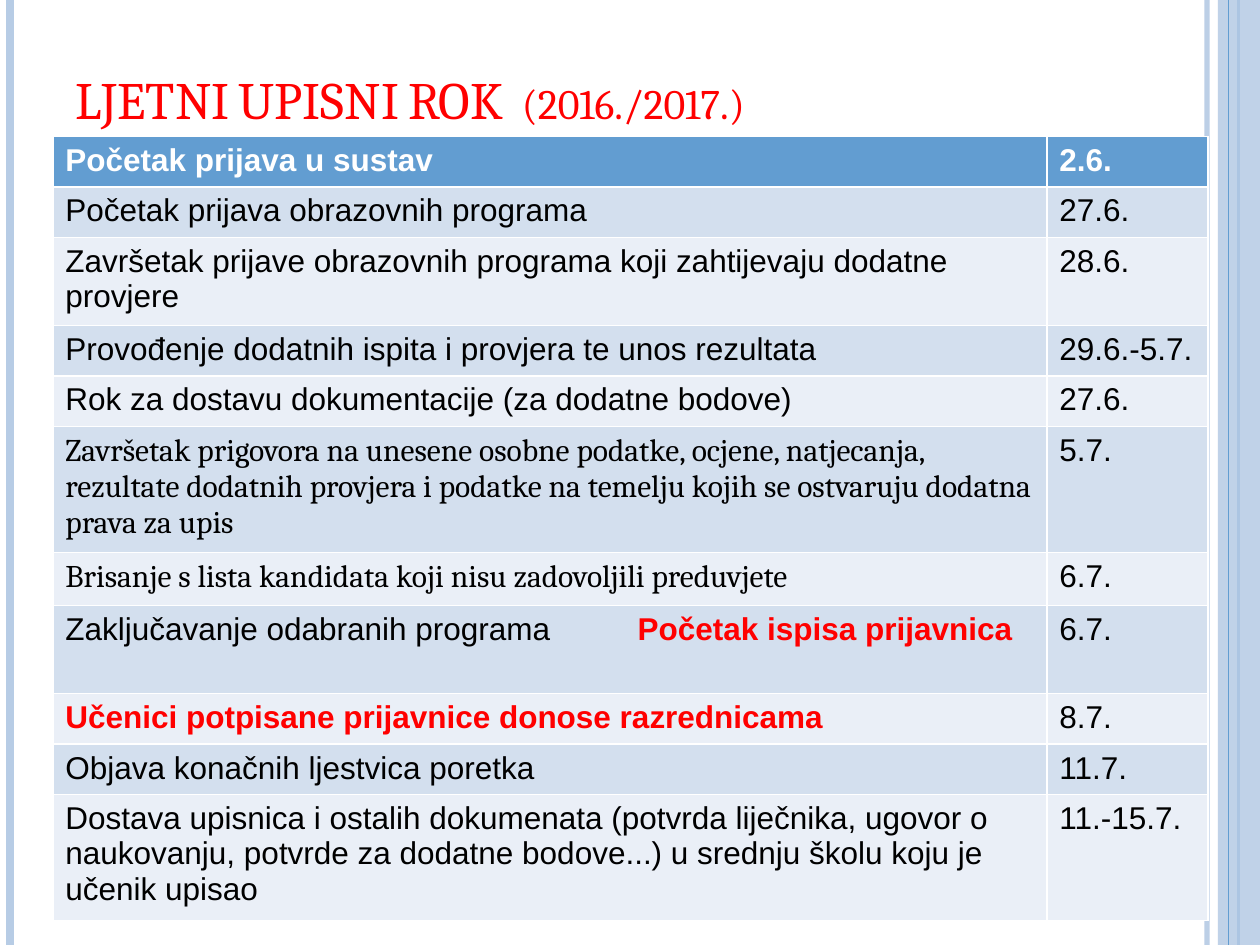
from dataclasses import dataclass

from lxml import etree
from pptx import Presentation
from pptx.dml.color import RGBColor
from pptx.enum.shapes import MSO_CONNECTOR, MSO_SHAPE
from pptx.enum.text import MSO_ANCHOR
from pptx.oxml.ns import qn
from pptx.util import Pt

STRAIGHT = MSO_CONNECTOR.STRAIGHT
RECTANGLE = MSO_SHAPE.RECTANGLE
BOTTOM = MSO_ANCHOR.BOTTOM

COLORS = {
    "pale_blue": "B7CCE5",
    "blue": "629DD1",
    "odd_row": "D3DFEE",
    "even_row": "EAEFF7",
    "red": "FF0000",
    "black": "000000",
    "white": "FFFFFF",
}
SLIDE_WIDTH, SLIDE_HEIGHT = 720, 540
COLUMN_WIDTHS = (568, 92)
ONE_LINE, CAMBRIA_LINE, TWO_LINES, THREE_LINES = 28.8, 30.24, 50.4, 72
NOTICE_TAB = 327


@dataclass
class Stripe:
    x: float
    weight: float
    color: str
    opacity: int = 100


@dataclass
class Deadline:
    event: str
    date: str
    height: float = ONE_LINE
    font: str = "Arial"
    urgent: bool = False
    notice: str = ""


STRIPES = (
    Stripe(689.8, 3, "pale_blue", 93),
    Stripe(5.8, 4.5, "pale_blue"),
    Stripe(707.8, 1.5, "blue"),
)
INNER_STRIPE = Stripe(702, 0.75, "blue")

DEADLINES = (
    Deadline("Početak prijava u sustav", "2.6."),
    Deadline("Početak prijava obrazovnih programa", "27.6."),
    Deadline("Završetak prijave obrazovnih programa koji zahtijevaju dodatne provjere",
             "28.6.", TWO_LINES),
    Deadline("Provođenje dodatnih ispita i provjera te unos rezultata", "29.6.-5.7."),
    Deadline("Rok za dostavu dokumentacije (za dodatne bodove)", "27.6."),
    Deadline("Završetak prigovora na unesene osobne podatke, ocjene, natjecanja, "
             "rezultate dodatnih provjera i podatke na temelju kojih se ostvaruju "
             "dodatna prava za upis", "5.7.", THREE_LINES, "Cambria"),
    Deadline("Brisanje s lista kandidata koji nisu zadovoljili preduvjete", "6.7.",
             CAMBRIA_LINE, "Cambria"),
    Deadline("Zaključavanje odabranih programa", "6.7.", TWO_LINES,
             notice="Početak ispisa prijavnica"),
    Deadline("Učenici potpisane prijavnice donose razrednicama", "8.7.", urgent=True),
    Deadline("Objava konačnih ljestvica poretka", "11.7."),
    Deadline("Dostava upisnica i ostalih dokumenata (potvrda liječnika, ugovor o "
             "naukovanju, potvrde za dodatne bodove...) u srednju školu koju je "
             "učenik upisao", "11.-15.7.", THREE_LINES),
)


def rgb(color: str) -> RGBColor:
    return RGBColor.from_string(COLORS[color])


def set_opacity(properties, percent: int) -> None:
    """Add transparency to the first solid colour below the given element."""
    if percent < 100:
        color = next(properties.iter(qn("a:srgbClr")))
        etree.SubElement(color, qn("a:alpha")).set("val", str(percent * 1000))


def add_stripe(slide, stripe: Stripe) -> None:
    line = slide.shapes.add_connector(
        STRAIGHT, Pt(stripe.x), Pt(0), Pt(stripe.x), Pt(SLIDE_HEIGHT))
    line.line.color.rgb = rgb(stripe.color)
    line.line.width = Pt(stripe.weight)
    properties = line._element.spPr
    set_opacity(properties, stripe.opacity)
    etree.SubElement(properties, qn("a:effectLst"))


def add_side_band(slide) -> None:
    left = 696
    band = slide.shapes.add_shape(
        RECTANGLE, Pt(left), Pt(0), Pt(SLIDE_WIDTH - left), Pt(SLIDE_HEIGHT))
    band.shadow.inherit = False
    band.fill.solid()
    band.fill.fore_color.rgb = rgb("pale_blue")
    band.line.fill.background()
    set_opacity(band._element.spPr, 87)


def add_run(paragraph, text: str, color: str, **font_format):
    run = paragraph.add_run()
    run.text = text
    run.font.color.rgb = rgb(color)
    for attribute, value in font_format.items():
        setattr(run.font, attribute, value)
    return run


def add_title(slide) -> None:
    title = slide.shapes.add_textbox(Pt(36), Pt(21.6), Pt(588), Pt(56.2))
    frame = title.text_frame
    frame.word_wrap = True
    frame.vertical_anchor = BOTTOM
    run = add_run(frame.paragraphs[0], "LJETNI UPISNI ROK  (2016./2017.)", "red",
                  name="Cambria", size=Pt(30))
    run.font._element.set("cap", "small")


def add_tab_stop(paragraph, position: float) -> None:
    stops = etree.SubElement(paragraph._p.get_or_add_pPr(), qn("a:tabLst"))
    etree.SubElement(stops, qn("a:tab"), pos=str(Pt(position)), algn="l")


def fill_row(table, index: int, deadline: Deadline) -> None:
    is_header = index == 0
    row_fill = "blue" if is_header else "odd_row" if index % 2 else "even_row"
    text_color = "white" if is_header else "black"
    event_color = "red" if deadline.urgent else text_color
    event_cell, date_cell = table.cell(index, 0), table.cell(index, 1)
    for cell in (event_cell, date_cell):
        cell.fill.solid()
        cell.fill.fore_color.rgb = rgb(row_fill)

    event = event_cell.text_frame.paragraphs[0]
    add_run(event, deadline.event, event_color, name=deadline.font, size=Pt(18),
            bold=is_header or deadline.urgent)
    if deadline.notice:
        add_tab_stop(event, NOTICE_TAB)
        add_run(event, "\t" + deadline.notice, "red", name="Arial", size=Pt(18), bold=True)
    add_run(date_cell.text_frame.paragraphs[0], deadline.date, text_color,
            name="Arial", size=Pt(18), bold=is_header)


def add_schedule(slide) -> None:
    height = sum(deadline.height for deadline in DEADLINES)
    table = slide.shapes.add_table(
        len(DEADLINES), len(COLUMN_WIDTHS), Pt(30.2), Pt(78),
        Pt(sum(COLUMN_WIDTHS)), Pt(height)).table
    for column, width in zip(table.columns, COLUMN_WIDTHS):
        column.width = Pt(width)
    for index, deadline in enumerate(DEADLINES):
        table.rows[index].height = Pt(deadline.height)
        fill_row(table, index, deadline)


def main() -> None:
    presentation = Presentation()
    presentation.slide_width = Pt(SLIDE_WIDTH)
    presentation.slide_height = Pt(SLIDE_HEIGHT)
    slide = presentation.slides.add_slide(presentation.slide_layouts[6])
    for stripe in STRIPES:
        add_stripe(slide, stripe)
    add_side_band(slide)
    add_stripe(slide, INNER_STRIPE)
    add_title(slide)
    add_schedule(slide)
    presentation.save("out.pptx")


if __name__ == "__main__":
    main()
